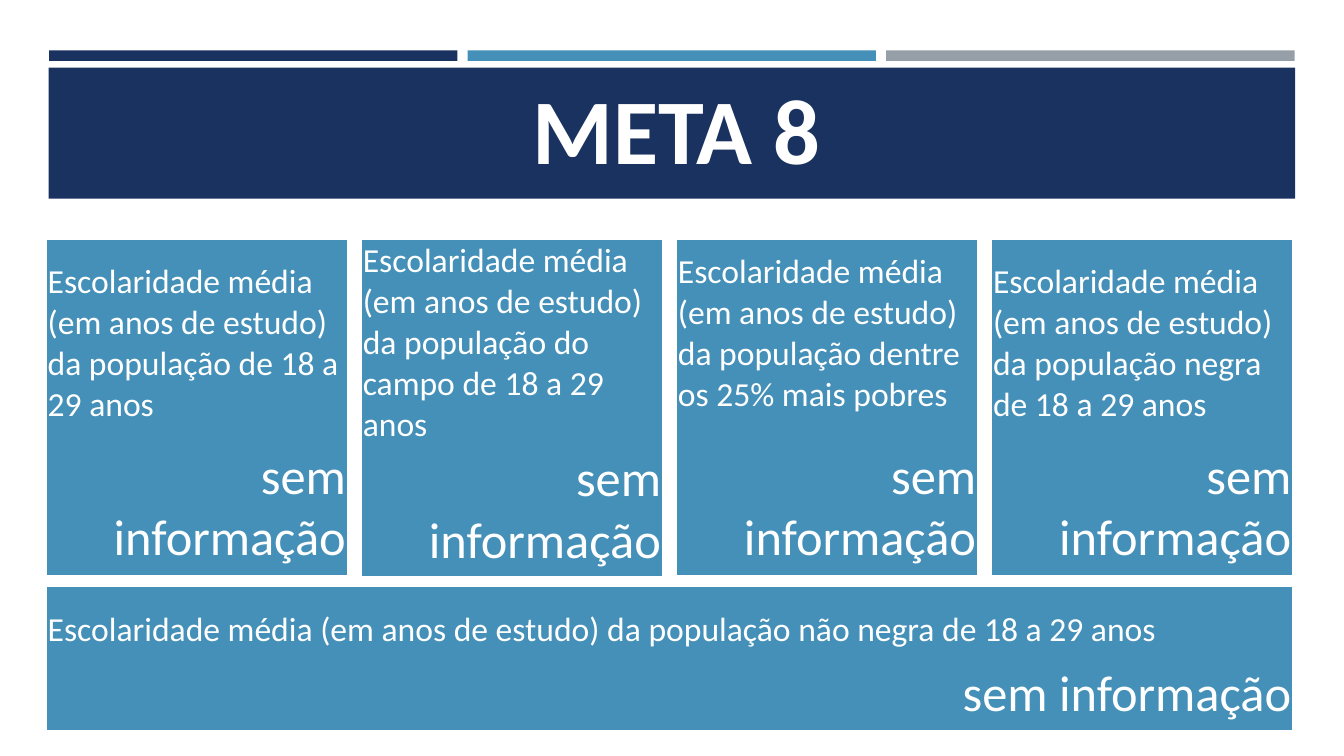
from dataclasses import dataclass

from pptx import Presentation
from pptx.dml.color import RGBColor
from pptx.enum.shapes import MSO_SHAPE as Shape
from pptx.enum.text import MSO_ANCHOR as Anchor, PP_ALIGN as Align
from pptx.oxml.ns import qn
from pptx.util import Pt

TITLE = "META 8"
STATUS = "sem informação"
INDICATOR = "Escolaridade média (em anos de estudo) da população "
# (population, height of the indicator row, height of the status row)
CARDS = [
    ("de 18 a 29 anos", 136, 103),
    ("do campo de 18 a 29 anos", 147, 92),
    ("dentre os 25% mais pobres", 129, 110),
    ("negra de 18 a 29 anos", 136, 103),
]
WIDE_CARD = ("não negra de 18 a 29 anos", 49, 53.2)


@dataclass(frozen=True)
class Theme:
    navy: str = "1A3260"
    blue: str = "4590B8"
    gray: str = "969FA7"
    white: str = "FFFFFF"
    font: str = "Calibri"
    title_size: int = 66
    status_size: int = 36
    indicator_size: int = 24


THEME = Theme()
NO_STYLE = "{2D5ABB26-0587-4C30-8999-92F81FD0307C}"

SLIDE_W, SLIDE_H = 960, 540
BAND_LEFT, BAND_W = 34.8, 890.4
STRIPE_LEFT, STRIPE_W, STRIPE_PITCH = 35, 291.7, 299
CARD_LEFT, CARD_TOP, CARD_W, CARD_PITCH = 33.3, 171.4, 214.5, 225.1
WIDE_TOP = 419.2


def add_block(s, left, top, width, height, color):
    sp = s.shapes.add_shape(Shape.RECTANGLE, Pt(left), Pt(top), Pt(width), Pt(height))
    sp.shadow.inherit = False
    sp.fill.solid()
    sp.fill.fore_color.rgb = RGBColor.from_string(color)
    sp.line.fill.background()


def style_paragraph(p, text, size, align, bold=False):
    p.text = text
    p.alignment = align
    p.font.name = THEME.font
    p.font.size = Pt(size)
    p.font.bold = bold
    p.font.color.rgb = RGBColor.from_string(THEME.white)


def add_card(s, card, left, top, width):
    """Add a two-row table: the indicator above, its status below."""
    population, *heights = card
    rows = [
        (INDICATOR + population, THEME.indicator_size, Align.LEFT),
        (STATUS, THEME.status_size, Align.RIGHT),
    ]
    frame = s.shapes.add_table(2, 1, Pt(left), Pt(top), Pt(width), Pt(sum(heights)))
    table = frame.table
    table.first_row = table.horz_banding = False
    table._tbl.tblPr.find(qn("a:tableStyleId")).text = NO_STYLE
    for i, (height, (text, size, align)) in enumerate(zip(heights, rows)):
        table.rows[i].height = Pt(height)
        cell = table.cell(i, 0)
        cell.fill.solid()
        cell.fill.fore_color.rgb = RGBColor.from_string(THEME.blue)
        cell.vertical_anchor = Anchor.BOTTOM
        cell.margin_left = cell.margin_right = cell.margin_top = Pt(0.75)
        cell.margin_bottom = Pt(3.6)
        style_paragraph(cell.text_frame.paragraphs[0], text, size, align)


def add_title(s):
    sp = s.shapes.add_textbox(Pt(52), Pt(55.2), Pt(862.6), Pt(80))
    tf = sp.text_frame
    tf.word_wrap = True
    tf.vertical_anchor = Anchor.BOTTOM
    p = tf.paragraphs[0]
    style_paragraph(p, TITLE, THEME.title_size, Align.CENTER, bold=True)
    p.line_spacing = 0.9


def main():
    prs = Presentation()
    prs.slide_width, prs.slide_height = Pt(SLIDE_W), Pt(SLIDE_H)
    s = prs.slides.add_slide(prs.slide_layouts[6])

    for i, color in enumerate((THEME.navy, THEME.blue, THEME.gray)):
        add_block(s, STRIPE_LEFT + i * STRIPE_PITCH, 36, STRIPE_W, 7.5, color)
    add_block(s, BAND_LEFT, 48.4, BAND_W, 93.6, THEME.navy)
    add_title(s)

    for i, card in enumerate(CARDS):
        add_card(s, card, CARD_LEFT + i * CARD_PITCH, CARD_TOP, CARD_W)
    wide_w = (len(CARDS) - 1) * CARD_PITCH + CARD_W
    add_card(s, WIDE_CARD, CARD_LEFT, WIDE_TOP, wide_w)

    prs.save("out.pptx")


if __name__ == "__main__":
    main()
